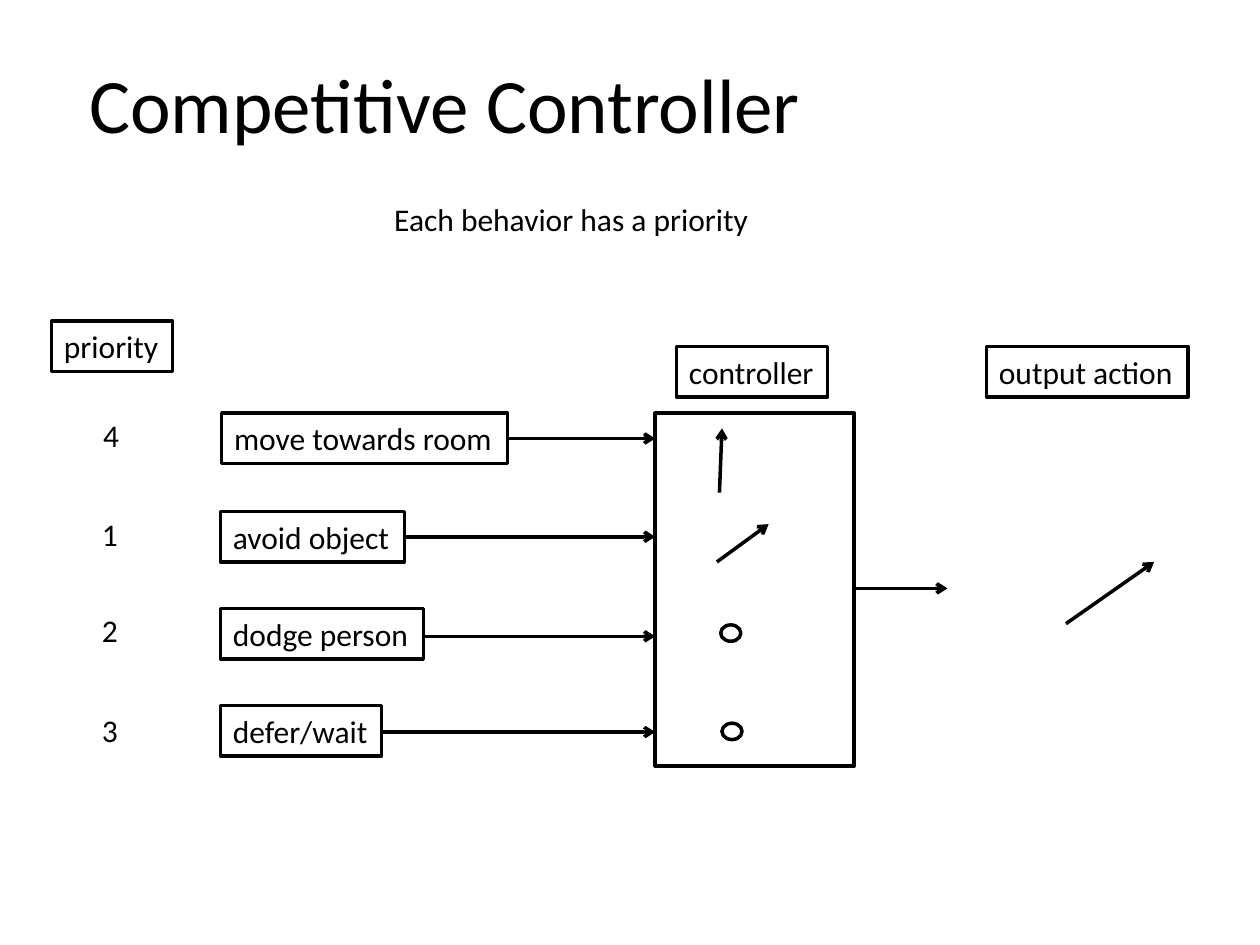
"""Build the Competitive Controller slide: prioritised behaviors feeding one controller."""
from lxml import etree
from pptx import Presentation
from pptx import util as u
from pptx.dml.color import RGBColor
from pptx.enum import shapes, text
from pptx.oxml import ns

PX = u.Inches(0.01)
BLACK = RGBColor(0, 0, 0)
FRAME = 40

deck = Presentation()
deck.slide_width, deck.slide_height = 1000 * PX, 750 * PX
page = deck.slides.add_slide(deck.slide_layouts[6])


def add_box(left, top, width, height, words="", size=18, outline=None, wrap=False):
    area = [value * PX for value in (left, top, width, height)]
    if outline is None:
        box = page.shapes.add_textbox(*area)
    else:
        box = page.shapes.add_shape(outline, *area)
        box.shadow.inherit = False
        box.fill.background()
        box.line.color.rgb = BLACK
        box.line.width = u.Pt(2)
    if words:
        frame = box.text_frame
        layout = {"word_wrap": wrap, "vertical_anchor": text.MSO_ANCHOR.TOP,
                  "auto_size": text.MSO_AUTO_SIZE.SHAPE_TO_FIT_TEXT}
        for name, value in layout.items():
            setattr(frame, name, value)
        para = frame.paragraphs[0]
        para.alignment = text.PP_ALIGN.LEFT
        span = para.add_run()
        span.text = words
        for name, value in {"name": "Calibri", "size": u.Pt(size)}.items():
            setattr(span.font, name, value)
        span.font.color.rgb = BLACK


def add_arrow(*ends):
    arrow = page.shapes.add_connector(
        shapes.MSO_CONNECTOR.STRAIGHT, *[value * PX for value in ends])
    arrow.line.color.rgb = BLACK
    arrow.line.width = u.Pt(2)
    etree.SubElement(arrow.line._get_or_add_ln(), ns.qn("a:tailEnd"), type="arrow")
    etree.SubElement(arrow._element.spPr, ns.qn("a:effectLst"))


RECTANGLE, OVAL = shapes.MSO_SHAPE.RECTANGLE, shapes.MSO_SHAPE.OVAL

add_box(61, 40, 591, 84, "Competitive Controller", size=44)
add_box(303, 154, 345, FRAME, "Each behavior has a priority", wrap=True)

headings = [("priority", 41, 255, 96), ("controller", 537, 275, 120),
            ("output action", 783, 275, 160)]
for words, left, top, width in headings:
    add_box(left, top, width, FRAME, words, outline=RECTANGLE)

controller_left, controller_right = 520, 678
add_box(controller_left, 328, controller_right - controller_left, 280, outline=RECTANGLE)

behaviors = [("move towards room", 176, 328, 227, 348, "4", 72, 325),
             ("avoid object", 175, 406, 146, 426, "1", 71, 404),
             ("dodge person", 175, 483, 161, 505, "2", 71, 480),
             ("defer/wait", 175, 560, 128, 581, "3", 71, 559)]
for words, left, top, width, arrow_y, priority, priority_left, priority_top in behaviors:
    add_box(left, top, width, FRAME, words, outline=RECTANGLE)
    add_arrow(left + width, arrow_y, controller_left, arrow_y)
    add_box(priority_left, priority_top, 36, FRAME, priority, wrap=True)

for ends in [(571, 391, 573, 340), (569, 446, 610, 416),
             (controller_right, 467, 752, 467), (846, 495, 916, 446)]:
    add_arrow(*ends)

for left, top in [(572, 496), (573, 574)]:
    add_box(left, top, 16, 13, outline=OVAL)

deck.save("out.pptx")
